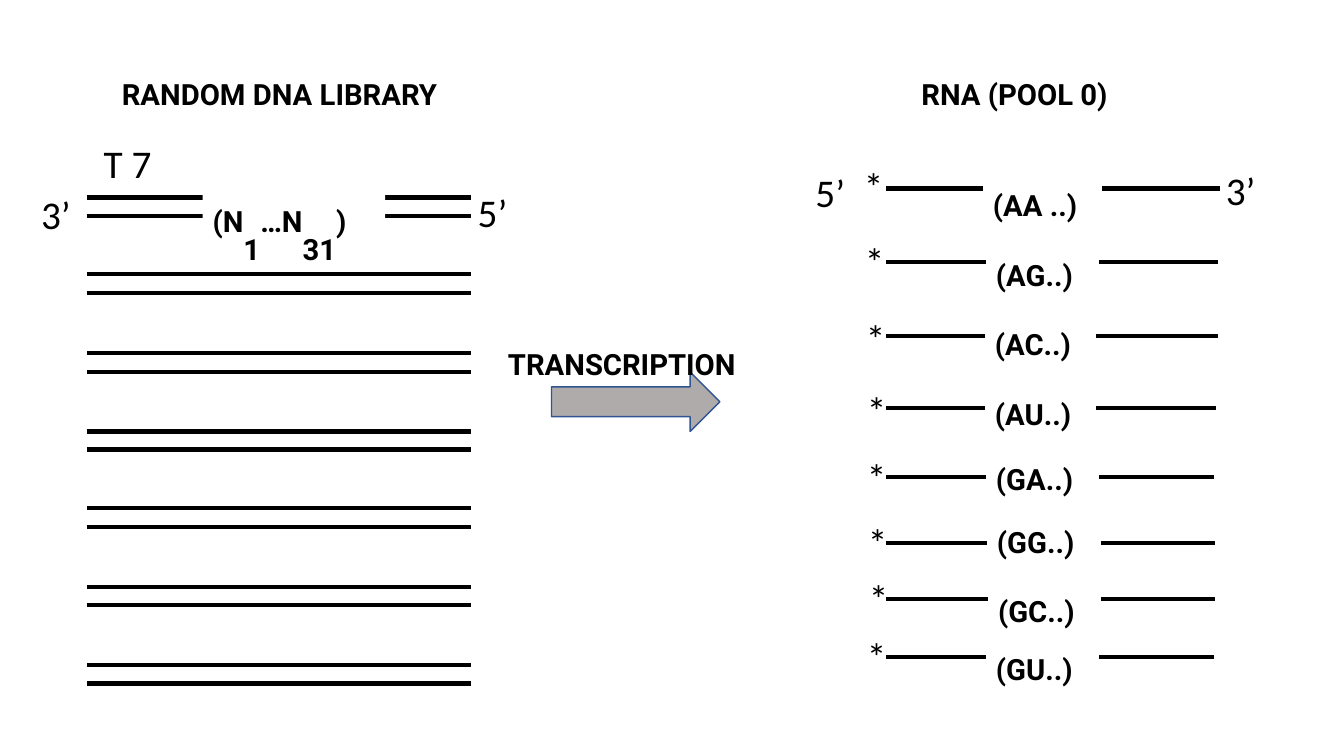
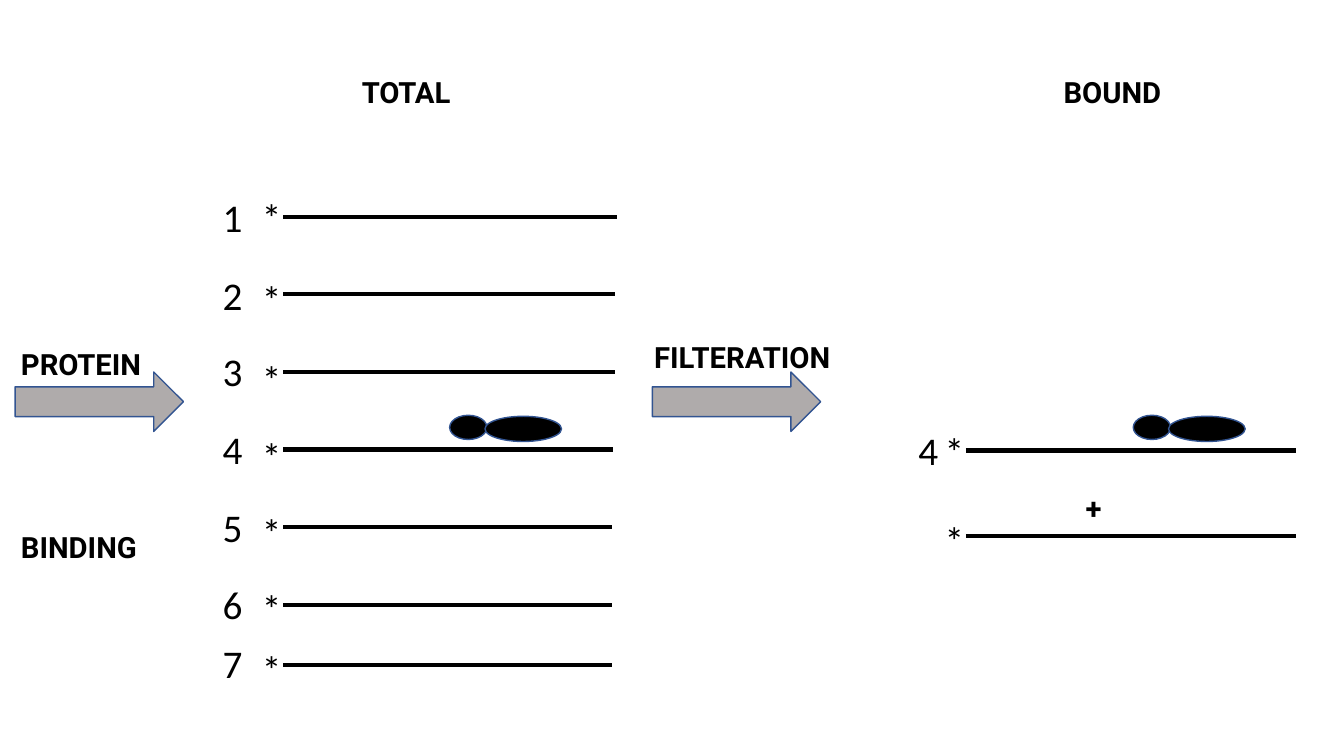
from lxml import etree
from pptx import Presentation
from pptx import util as u
from pptx.dml.color import RGBColor
from pptx.enum import shapes, text
from pptx.oxml.ns import qn

PX = 9144  # EMU per px, 100 px to the inch
BLACK = RGBColor(0x00, 0x00, 0x00)
WHITE = RGBColor(0xFF, 0xFF, 0xFF)
GREY = RGBColor(0xAF, 0xAB, 0xAB)
BLUE = RGBColor(0x32, 0x54, 0x91)
RAISED, LOWERED = 30000, -25000


def px(*lengths):
    return [u.Emu(n * PX) for n in lengths]


def add_strand(s, x1, x2, y):
    """Horizontal nucleic acid strand."""
    ln = s.shapes.add_connector(shapes.MSO_CONNECTOR.STRAIGHT, *px(x1, y, x2, y))
    ln.line.color.rgb = BLACK
    ln.line.width = u.Pt(3)
    etree.SubElement(ln._element.spPr, qn("a:effectLst"))


def add_shape(s, kind, box, fill):
    sp = s.shapes.add_shape(kind, *px(*box))
    sp.shadow.inherit = False
    sp.fill.solid()
    sp.fill.fore_color.rgb = fill
    sp.line.color.rgb = BLUE
    sp.line.width = u.Pt(1)


def add_arrow(s, x):
    add_shape(s, shapes.MSO_SHAPE.RIGHT_ARROW, (x, 369, 167, 59), GREY)


def add_protein(s, x):
    """Protein bound to a strand: a small and a large lobe."""
    add_shape(s, shapes.MSO_SHAPE.OVAL, (x, 412, 37, 24), BLACK)
    add_shape(s, shapes.MSO_SHAPE.OVAL, (x + 35, 413, 76, 25), BLACK)


def add_textbox(s, x, y, w, h):
    sp = s.shapes.add_textbox(*px(x, y, w, h))
    tf = sp.text_frame
    tf.word_wrap = False
    tf.auto_size = text.MSO_AUTO_SIZE.SHAPE_TO_FIT_TEXT
    return sp


def format_run(r, font, size, bold=False):
    r.font.name = font
    r.font.size = u.Pt(size)
    r.font.bold = bold
    r.font.color.rgb = BLACK


def add_mark(s, content, x, y, w=40):
    """Plain sign beside a strand: end, number or asterisk."""
    tf = add_textbox(s, x, y, w, 57).text_frame
    tf.text = content
    format_run(tf.paragraphs[0].runs[0], "Calibri", 28)


def add_label(s, parts, x, y, w, h=50, fill=None):
    """Bold label; parts alternate between raised and lowered text."""
    sp = add_textbox(s, x, y, w, h)
    if fill is not None:
        sp.fill.solid()
        sp.fill.fore_color.rgb = fill
    p = sp.text_frame.paragraphs[0]
    for i, part in enumerate(parts):
        r = p.add_run()
        r.text = part
        format_label_run(r, LOWERED if i % 2 else RAISED)
    return sp


def format_label_run(r, baseline):
    format_run(r, "Roboto", 36, bold=True)
    r.font._element.set("baseline", str(baseline))


def build_transcription(s):
    # DNA library: pairs of strands
    tops = (196, 272, 350, 428, 504, 582, 660)
    bottoms = (214, 291, 369, 446, 523, 600, 678)
    for y in tops + bottoms:
        add_strand(s, 86, 467, y)
    add_label(s, ["RANDOM DNA LIBRARY"], 111, 65, 411)
    add_label(s, ["(N", "1", "…N", "31", ")"], 201, 191, 181, fill=WHITE)
    add_mark(s, "T 7", 93, 133, 68)
    add_mark(s, "3’", 31, 184, 50)
    add_mark(s, "5’", 464, 182, 50)

    # Step between the columns
    add_arrow(s, 547)
    add_label(s, ["TRANSCRIPTION"], 494, 333, 297)

    # RNA pool: strand y and end, asterisk x and y, bases with x, y and width
    rows = [
        (187, 1210, 847, 156, "(AA ..)", 975, 175, 118),
        (260, 1208, 848, 231, "(AG..)", 978, 244, 112),
        (333, 1208, 849, 307, "(AC..)", 977, 313, 110),
        (405, 1206, 850, 378, "(AU..)", 977, 382, 110),
        (473, 1204, 850, 445, "(GA..)", 978, 447, 112),
        (539, 1205, 851, 509, "(GG..)", 979, 509, 113),
        (594, 1205, 852, 565, "(GC..)", 980, 578, 112),
        (652, 1204, 850, 622, "(GU..)", 978, 635, 112),
    ]
    add_label(s, ["RNA (POOL 0)"], 904, 65, 246)
    for y, end, star_x, star_y, bases, x, label_y, w in rows:
        add_strand(s, 879, end, y)
        add_mark(s, "*", star_x, star_y)
        add_label(s, [bases], x, label_y, w, fill=WHITE)
    add_mark(s, "5’", 799, 162, 50)
    add_mark(s, "3’", 1206, 160, 50)


def build_binding(s):
    # Protein binding step
    add_arrow(s, 15)
    tf = add_label(s, ["PROTEIN"], 11, 333, 170, 172).text_frame
    p = tf.add_paragraph()
    p.text = "BINDING"
    p.space_before = u.Pt(87)
    format_label_run(p.runs[0], RAISED)

    # Total pool: strand y and end, number y, asterisk y
    rows = [
        (215, 612, 187, 187),
        (292, 610, 264, 268),
        (369, 610, 340, 348),
        (446, 608, 417, 424),
        (523, 607, 494, 499),
        (600, 607, 571, 575),
        (660, 607, 629, 635),
    ]
    add_label(s, ["TOTAL"], 349, 63, 129)
    for number, (y, end, number_y, star_y) in enumerate(rows, 1):
        add_strand(s, 281, end, y)
        add_mark(s, str(number), 211, number_y)
        add_mark(s, "*", 250, star_y)
    add_protein(s, 446)

    # Filtration step
    add_arrow(s, 647)
    add_label(s, ["FILTERATION"], 639, 326, 238)

    # Bound strands
    add_label(s, ["BOUND"], 1045, 63, 144)
    for y, star_y in ((447, 419), (532, 507)):
        add_strand(s, 958, 1285, y)
        add_mark(s, "*", 927, star_y)
    add_mark(s, "4", 901, 418)
    add_protein(s, 1124)
    add_label(s, ["+"], 1067, 475, 40)


def main():
    prs = Presentation()
    prs.slide_width, prs.slide_height = px(1333, 750)
    for build in (build_transcription, build_binding):
        build(prs.slides.add_slide(prs.slide_layouts[6]))
    prs.save("out.pptx")


if __name__ == "__main__":
    main()
